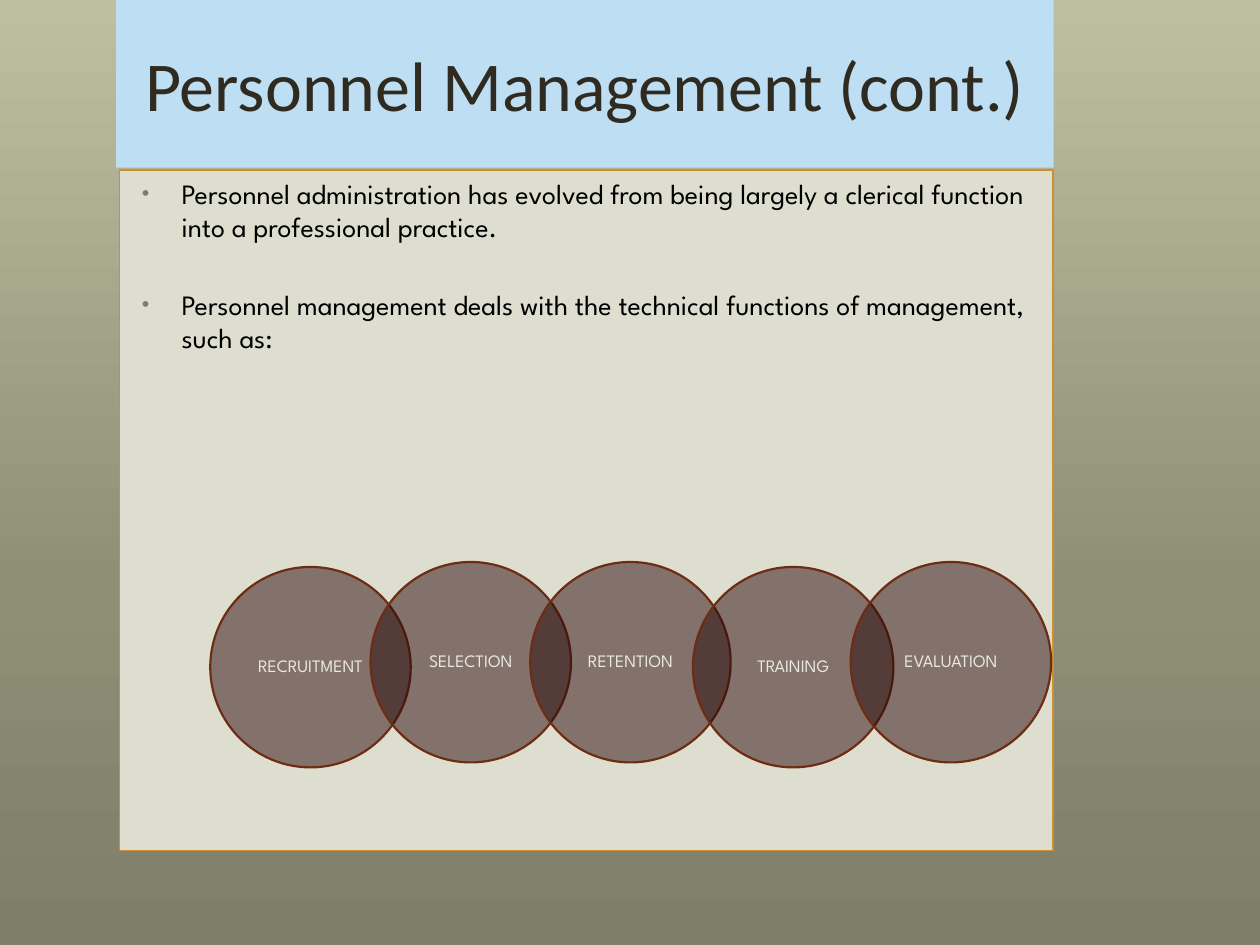
"""Build the slide on personnel management and its five technical functions."""
import copy
from dataclasses import dataclass

import lxml.etree
import pptx
import pptx.dml.color
import pptx.enum.shapes
import pptx.enum.text
import pptx.oxml.ns
import pptx.util

Cm = pptx.util.Cm
Pt = pptx.util.Pt
qn = pptx.oxml.ns.qn
ShapeType = pptx.enum.shapes.MSO_SHAPE
Align = pptx.enum.text.PP_ALIGN
Anchor = pptx.enum.text.MSO_ANCHOR

COLORS = {
    "title_fill": "BEDEF3",
    "title_text": "2F2B20",
    "body_fill": "DEDED0",
    "body_line": "CF8F31",
    "body_text": "000000",
    "bullet": "7A7A7A",
    "circle_fill": "270708",
    "circle_line": "6E2C12",
    "circle_text": "E9E9E0",
}
BACKDROP = ((0, "BEBEA2"), (0.62, "8F8F76"), (1, "7E7E69"))
TITLE = "Personnel Management (cont.)"
POINTS = (
    "Personnel administration has evolved from being largely a clerical function "
    "into a professional practice.",
    "Personnel management deals with the technical functions of management, such as:",
)
POINT_GAPS = (3.2, 25)
DIAMETER = 4.04


@dataclass(frozen=True)
class Function:
    label: str
    left: float
    top: float


FUNCTIONS = (
    Function("RECRUITMENT", 4.24, 11.43),
    Function("SELECTION", 7.47, 11.33),
    Function("RETENTION", 10.69, 11.33),
    Function("TRAINING", 13.97, 11.43),
    Function("EVALUATION", 17.15, 11.33),
)


def rgb(name: str) -> pptx.dml.color.RGBColor:
    """Return the named colour."""
    return pptx.dml.color.RGBColor.from_string(COLORS[name])


def paint_backdrop(slide) -> None:
    """Fill the background with a vertical gradient of three stops."""
    fill = slide.background.fill
    fill.gradient()
    fill.gradient_angle = 270
    last = fill.gradient_stops[-1]._gs
    last.addprevious(copy.deepcopy(last))
    for stop, (position, color) in zip(fill.gradient_stops, BACKDROP):
        stop.position = position
        stop.color.rgb = pptx.dml.color.RGBColor.from_string(color)


def add_panel(shapes, kind, box: tuple, fill: str, line: str = "", width: float = 0):
    """Add a flat filled shape at a box given in centimetres."""
    panel = shapes.add_shape(kind, *(Cm(length) for length in box))
    panel.shadow.inherit = False
    panel.fill.solid()
    panel.fill.fore_color.rgb = rgb(fill)
    if line:
        panel.line.color.rgb = rgb(line)
        panel.line.width = Pt(width)
    else:
        panel.line.fill.background()
    panel.text_frame.word_wrap = True
    return panel


def style(paragraph, font: str, size: float, color: str, align=Align.LEFT) -> None:
    """Set the alignment of a paragraph and the font of its runs."""
    paragraph.alignment = align
    for run in paragraph.runs:
        run.font.name = font
        run.font.size = Pt(size)
        run.font.color.rgb = rgb(color)


def add_bullet(paragraph) -> None:
    """Give a paragraph a hanging grey bullet."""
    properties = paragraph._p.get_or_add_pPr()
    properties.set("marL", str(Cm(1)))
    properties.set("indent", str(-Cm(0.8)))
    color = lxml.etree.SubElement(properties, qn("a:buClr"))
    lxml.etree.SubElement(color, qn("a:srgbClr"), val=COLORS["bullet"])
    lxml.etree.SubElement(properties, qn("a:buSzPct"), val="76000")
    lxml.etree.SubElement(properties, qn("a:buFont"), typeface="Arial")
    lxml.etree.SubElement(properties, qn("a:buChar"), char="•")


def add_title(slide) -> None:
    """Add the title band."""
    band = add_panel(slide.shapes, ShapeType.RECTANGLE, (2.34, 0, 18.9, 3.38), "title_fill")
    band.text_frame.text = TITLE
    band.text_frame.vertical_anchor = Anchor.MIDDLE
    style(band.text_frame.paragraphs[0], "Calibri", 40, "title_text", Align.CENTER)


def add_body(slide) -> None:
    """Add the body panel with its bulleted points."""
    body = add_panel(slide.shapes, ShapeType.RECTANGLE, (2.41, 3.43, 18.82, 13.72),
                     "body_fill", "body_line", 0.75)
    body.text_frame.text = "\n".join(POINTS)
    body.text_frame.vertical_anchor = Anchor.TOP
    for paragraph, gap in zip(body.text_frame.paragraphs, POINT_GAPS):
        style(paragraph, "League Spartan", 16, "body_text")
        paragraph.space_before = Pt(gap)
        add_bullet(paragraph)


def add_function(shapes, function: Function) -> None:
    """Add one translucent labelled circle."""
    circle = add_panel(shapes, ShapeType.OVAL,
                       (function.left, function.top, DIAMETER, DIAMETER),
                       "circle_fill", "circle_line", 1.25)
    color = circle._element.spPr.find(qn("a:solidFill")).find(qn("a:srgbClr"))
    lxml.etree.SubElement(color, qn("a:alpha"), val="50000")
    frame = circle.text_frame
    frame.text = function.label
    frame.vertical_anchor = Anchor.MIDDLE
    frame.margin_left = frame.margin_right = Cm(0.23)
    frame.margin_top = frame.margin_bottom = Cm(0.03)
    frame.paragraphs[0].line_spacing = 0.9
    style(frame.paragraphs[0], "League Spartan", 10, "circle_text", Align.CENTER)


def main() -> None:
    """Build and save the presentation."""
    presentation = pptx.Presentation()
    presentation.slide_width = Cm(25.4)
    presentation.slide_height = Cm(19.05)
    slide = presentation.slides.add_slide(presentation.slide_layouts[6])
    paint_backdrop(slide)
    add_title(slide)
    add_body(slide)
    chain = slide.shapes.add_group_shape()
    for function in FUNCTIONS:
        add_function(chain.shapes, function)
    presentation.save("out.pptx")


if __name__ == "__main__":
    main()
